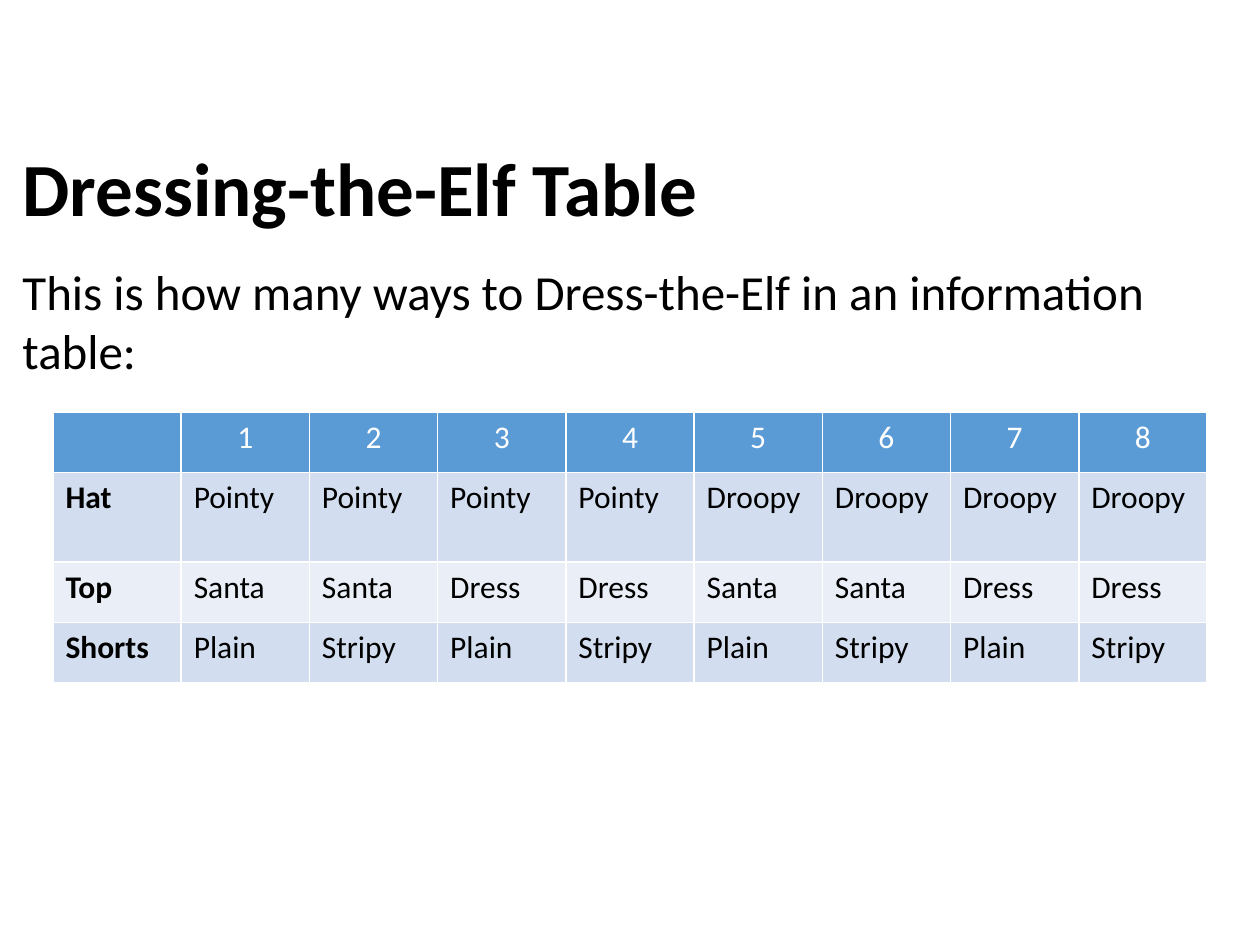
from lxml.etree import SubElement
from pptx import Presentation
from pptx.dml.color import RGBColor
from pptx.enum.text import MSO_ANCHOR, MSO_AUTO_SIZE, PP_ALIGN
from pptx.oxml.ns import qn
from pptx.util import Inches, Pt

BLACK, WHITE, BLUE = "000000", "FFFFFF", "5B9BD5"
BANDS = ("D2DEEF", "EAEFF7")
COLUMN_WIDTH = 9.16 / 9
ROW_HEIGHTS = (0.48, 0.71, 0.48, 0.48)

OUTFITS = (
    ("", *"12345678"),
    ("Hat", *["Pointy"] * 4, *["Droopy"] * 4),
    ("Top", *["Santa", "Santa", "Dress", "Dress"] * 2),
    ("Shorts", *["Plain", "Stripy"] * 4),
)


def color(value):
    return RGBColor.from_string(value)


def write(frame, text, size=18, fill=BLACK, bold=False, align=PP_ALIGN.LEFT, spacing=None):
    para = frame.paragraphs[0]
    para.alignment = align
    para.line_spacing = spacing
    span = para.add_run()
    span.text = text
    span.font.name = "Calibri"
    span.font.size = Pt(size)
    span.font.bold = bold
    span.font.color.rgb = color(fill)


def add_borders(cell):
    properties = cell._tc.get_or_add_tcPr()
    for position, side in enumerate(("lnL", "lnR", "lnT", "lnB")):
        line = SubElement(properties, qn(f"a:{side}"), w=str(Pt(1)))
        fill = SubElement(line, qn("a:solidFill"))
        SubElement(fill, qn("a:srgbClr"), val=WHITE)
        properties.insert(position, line)


def add_title(slide):
    title = slide.shapes.title
    title.left, title.top = Inches(0.08), Inches(1.13)
    title.width, title.height = Inches(10.38), Inches(0.79)
    frame = title.text_frame
    frame.auto_size = MSO_AUTO_SIZE.NONE
    frame.vertical_anchor = MSO_ANCHOR.MIDDLE
    write(frame, "Dressing-the-Elf Table", size=42.9, bold=True, spacing=0.9)


def add_introduction(slide):
    box = slide.shapes.add_textbox(Inches(0.08), Inches(2.03), Inches(9.92), Inches(1.04))
    box.text_frame.word_wrap = True
    write(
        box.text_frame,
        "This is how many ways to Dress-the-Elf in an information table:",
        size=28,
    )


def add_outfit_table(slide):
    row_count, column_count = len(OUTFITS), len(OUTFITS[0])
    table = slide.shapes.add_table(
        row_count, column_count, Inches(0.42), Inches(3.27),
        Inches(COLUMN_WIDTH * column_count), Inches(sum(ROW_HEIGHTS)),
    ).table
    for column in table.columns:
        column.width = Inches(COLUMN_WIDTH)
    for row_index, (row, height) in enumerate(zip(table.rows, ROW_HEIGHTS)):
        row.height = Inches(height)
        header = row_index == 0
        for column_index, cell in enumerate(row.cells):
            cell.fill.solid()
            cell.fill.fore_color.rgb = color(BLUE if header else BANDS[(row_index - 1) % 2])
            add_borders(cell)
            text = OUTFITS[row_index][column_index]
            if text:
                write(
                    cell.text_frame,
                    text,
                    fill=WHITE if header else BLACK,
                    bold=column_index == 0,
                    align=PP_ALIGN.CENTER if header else PP_ALIGN.LEFT,
                )


def main():
    deck = Presentation()
    deck.slide_width, deck.slide_height = Inches(10), Inches(7.5)
    slide = deck.slides.add_slide(deck.slide_layouts[5])
    add_title(slide)
    add_outfit_table(slide)
    add_introduction(slide)
    deck.save("out.pptx")


if __name__ == "__main__":
    main()
